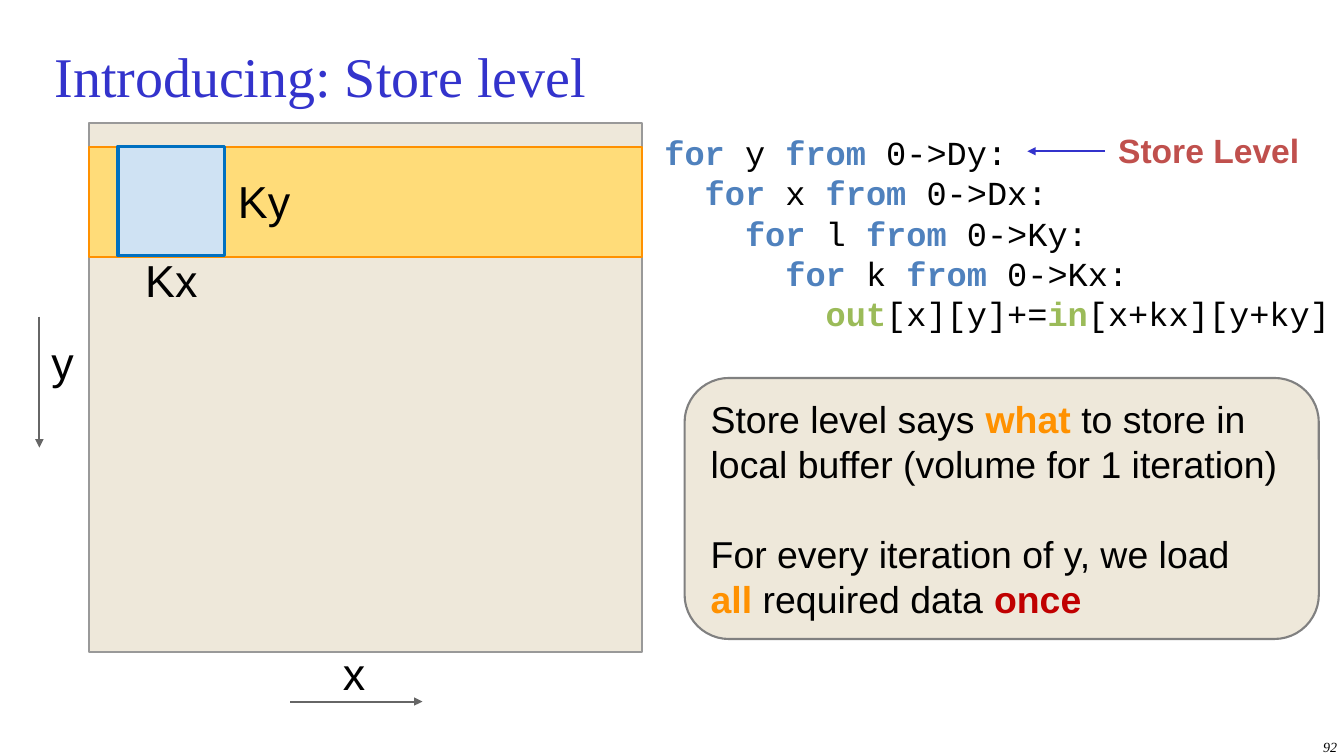
from lxml import etree
from pptx import Presentation
from pptx.dml.color import RGBColor
from pptx.enum.shapes import MSO_CONNECTOR, MSO_SHAPE
from pptx.enum.text import MSO_ANCHOR, PP_ALIGN
from pptx.oxml.ns import qn
from pptx.util import Inches, Pt

RECTANGLE = MSO_SHAPE.RECTANGLE
ROUNDED = MSO_SHAPE.ROUNDED_RECTANGLE
STRAIGHT = MSO_CONNECTOR.STRAIGHT
TOP, MIDDLE = MSO_ANCHOR.TOP, MSO_ANCHOR.MIDDLE
LEFT, RIGHT = PP_ALIGN.LEFT, PP_ALIGN.RIGHT

BLACK = RGBColor(0x00, 0x00, 0x00)
INDIGO = RGBColor(0x33, 0x33, 0xCC)
BEIGE = RGBColor(0xEE, 0xE8, 0xDA)
FIELD_EDGE = RGBColor(0x99, 0x99, 0x99)
NOTE_EDGE = RGBColor(0x80, 0x80, 0x80)
AXIS_GREY = RGBColor(0x66, 0x66, 0x66)
YELLOW = RGBColor(0xFF, 0xDC, 0x79)
ORANGE = RGBColor(0xFF, 0x91, 0x00)
PALE_BLUE = RGBColor(0xCF, 0xE2, 0xF3)
KERNEL_EDGE = RGBColor(0x00, 0x70, 0xC0)
KEYWORD = RGBColor(0x4F, 0x81, 0xBD)
ARRAY = RGBColor(0x9B, 0xBB, 0x59)
BRICK = RGBColor(0xC0, 0x50, 0x4D)
RED = RGBColor(0xC0, 0x00, 0x00)

SANS, SERIF, MONO = "Arial", "Times New Roman", "Courier New"
WIDTH, HEIGHT = Inches(13.33), Inches(7.5)
COLUMN, ROW = WIDTH / 100, HEIGHT / 100
LOOPS = [("y", "Dy"), ("x", "Dx"), ("l", "Ky"), ("k", "Kx")]
LOOP_INDENT = Inches(0.4)


def place(column, row, columns, rows):
    return [round(length) for length in
            (column * COLUMN, row * ROW, columns * COLUMN, rows * ROW)]


def add_box(slide, area, fill, edge, weight=1.5, kind=RECTANGLE):
    box = slide.shapes.add_shape(kind, *place(*area))
    box.shadow.inherit = False
    box.fill.solid()
    box.fill.fore_color.rgb = fill
    box.line.color.rgb = edge
    box.line.width = Pt(weight)
    return box


def set_frame(frame, inset, anchor):
    frame.word_wrap = True
    frame.vertical_anchor = anchor
    frame.margin_left = frame.margin_right = Inches(inset)
    frame.margin_top = frame.margin_bottom = Inches(inset)


def write_lines(frame, lines, size, font, pitch):
    for number, pieces in enumerate(lines):
        line = frame.add_paragraph() if number else frame.paragraphs[0]
        line.alignment = LEFT
        line.line_spacing = Pt(pitch)
        line.font.size = Pt(size)
        line.font.name = font
        for text, color, bold in pieces:
            piece = line.add_run()
            piece.text = text
            piece.font.color.rgb = color
            piece.font.bold = bold


def add_label(slide, area, text, size, font=SANS, color=BLACK, bold=False,
              italic=False, align=LEFT, anchor=TOP, inset=0.13):
    frame = slide.shapes.add_textbox(*place(*area)).text_frame
    set_frame(frame, inset, anchor)
    line = frame.paragraphs[0]
    line.text = text
    line.alignment = align
    line.font.size = Pt(size)
    line.font.name = font
    line.font.color.rgb = color
    line.font.bold = bold
    line.font.italic = italic


def add_arrow(slide, start, end, color):
    arrow = slide.shapes.add_connector(STRAIGHT, *place(*start, *end))
    arrow.line.color.rgb = color
    arrow.line.width = Pt(1.5)
    outline = arrow.line._get_or_add_ln()
    etree.SubElement(outline, qn("a:tailEnd"), type="triangle")
    etree.SubElement(arrow._element.spPr, qn("a:effectLst"))


def add_loop_code(slide):
    lines = [[("for", KEYWORD, True), (f" {index} ", BLACK, False),
              ("from ", KEYWORD, True), (f"0->{bound}:", BLACK, False)]
             for index, bound in LOOPS]
    lines.append([("out", ARRAY, True), ("[x][y]+=", BLACK, False),
                  ("in", ARRAY, True), ("[x+kx][y+ky]", BLACK, False)])
    frame = slide.shapes.add_textbox(
        *place(48.46, 15.73, 52.14, 36.53)).text_frame
    set_frame(frame, 0.13, TOP)
    write_lines(frame, lines, 24, MONO, 28.8)
    for depth, line in enumerate(frame.paragraphs):
        properties = line._p.get_or_add_pPr()
        properties.set("marL", str(depth * LOOP_INDENT))
        properties.set("indent", "0")


def add_note(slide):
    note = add_box(slide, (50.94, 50, 47.19, 34.53), BEIGE, NOTE_EDGE,
                   kind=ROUNDED)
    note.adjustments[0] = 0.17
    frame = note.text_frame
    set_frame(frame, 0.13, MIDDLE)
    write_lines(frame, [
        [("Store level says ", BLACK, False), ("what", ORANGE, True),
         (" to store in local buffer (volume for 1 iteration)", BLACK, False)],
        [("For every iteration of y, we load", BLACK, False)],
        [("all ", ORANGE, True), ("required data ", BLACK, False),
         ("once", RED, True)],
    ], 26.7, SANS, 32)
    frame.paragraphs[1].space_before = Pt(32)


def main():
    deck = Presentation()
    deck.slide_width, deck.slide_height = WIDTH, HEIGHT
    slide = deck.slides.add_slide(deck.slide_layouts[6])

    add_box(slide, (6.6, 16.27, 41.19, 70), BEIGE, FIELD_EDGE)
    add_label(slide, (3.15, 3.33, 93.55, 13.33), "Introducing: Store level",
              40, SERIF, INDIGO, anchor=MIDDLE, inset=0.12)
    add_box(slide, (6.6, 19.47, 41.19, 14.53), YELLOW, ORANGE)
    add_box(slide, (8.78, 19.33, 7.95, 14.53), PALE_BLUE, KERNEL_EDGE, 2.25)

    add_loop_code(slide)
    add_label(slide, (82.22, 15.47, 16.5, 9.87), "Store Level", 24,
              color=BRICK, bold=True)

    for text, column, row in [("x", 24.53, 83.73), ("y", 2.85, 42.53),
                              ("Ky", 16.73, 21.2), ("Kx", 9.83, 31.73)]:
        add_label(slide, (column, row, 12.23, 8), text, 32)

    for start, end, color in [((82.22, 20), (76.44, 20), INDIGO),
                              ((21.61, 92.8), (31.43, 92.8), AXIS_GREY),
                              ((2.93, 41.87), (2.93, 59.2), AXIS_GREY)]:
        add_arrow(slide, start, end, color)

    add_note(slide)
    add_label(slide, (79.22, 96.67, 20.86, 3.33), "92", 10, SERIF,
              italic=True, align=RIGHT, inset=0.08)
    deck.save("out.pptx")


if __name__ == "__main__":
    main()
